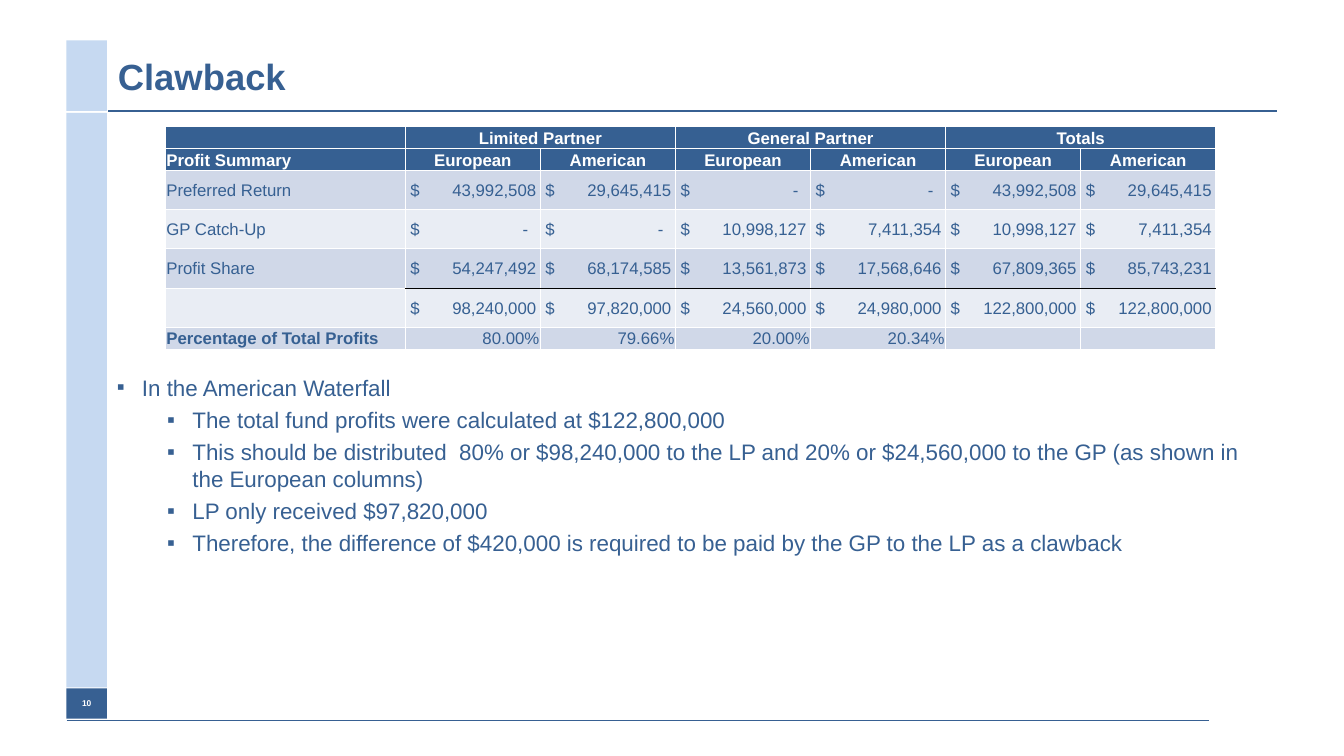
"""Builds the clawback slide: profit table above bullet points."""
import lxml.etree
import pptx
import pptx.dml.color
import pptx.enum.shapes
import pptx.enum.text
import pptx.oxml.ns
import pptx.util

RGB = pptx.dml.color.RGBColor
NAVY = RGB(0x37, 0x60, 0x92)
HEAD = RGB(0x36, 0x60, 0x92)
PALE = RGB(0xC6, 0xD9, 0xF1)
BAND = RGB(0xD0, 0xD8, 0xE8)
LIGHT = RGB(0xE9, 0xED, 0xF4)
WHITE = RGB(0xFF, 0xFF, 0xFF)
BLACK = RGB(0, 0, 0)
FONT = "Arial"
WIDE, HIGH = 13.33, 7.5

TITLE = "Clawback"
PAGE = "10"
POINTS = [
    (0, "In the American Waterfall"),
    (1, "The total fund profits were calculated at $122,800,000"),
    (1, "This should be distributed  80% or $98,240,000 to the LP and 20% or $24,560,000 "
        "to the GP (as shown in the European columns)"),
    (1, "LP only received $97,820,000"),
    (1, "Therefore, the difference of $420,000 is required to be paid by the GP to the LP "
        "as a clawback"),
]
ROWS = [
    ["", "Limited Partner", "", "General Partner", "", "Totals", ""],
    ["Profit Summary"] + ["European", "American"] * 3,
    ["Preferred Return", "43,992,508", "29,645,415", "-", "-", "43,992,508", "29,645,415"],
    ["GP Catch-Up", "-", "-", "10,998,127", "7,411,354", "10,998,127", "7,411,354"],
    ["Profit Share", "54,247,492", "68,174,585", "13,561,873", "17,568,646",
     "67,809,365", "85,743,231"],
    ["", "98,240,000", "97,820,000", "24,560,000", "24,980,000", "122,800,000", "122,800,000"],
    ["Percentage of Total Profits", "80.00%", "79.66%", "20.00%", "20.34%", "", ""],
]
COLS = [2.38] + [1.34] * 6
TALLS = [0.22] * 2 + [0.39] * 4 + [0.22]
SUM = 5
LAST = len(ROWS) - 1
BARS = [(0.4, 0.7, PALE, ""), (1.12, 5.7, PALE, ""), (6.83, 0.3, NAVY, PAGE)]
RULES = [(0.66, 11.99, 7.15, 0.75), (1.07, 12.67, 1.1, 1)]

inch = pptx.util.Inches
point = pptx.util.Pt
ALIGN = pptx.enum.text.PP_ALIGN
ANCHOR = pptx.enum.text.MSO_ANCHOR


def sub(node, tag, **keys):
    return lxml.etree.SubElement(node, pptx.oxml.ns.qn("a:" + tag), **keys)


def paint(node, tone):
    sub(node, "srgbClr", val=str(tone))


def put(par, text, size, tone, bold=False):
    run = par.add_run()
    run.text = text
    for key, val in {"name": FONT, "size": point(size), "bold": bold}.items():
        setattr(run.font, key, val)
    run.font.color.rgb = tone


def edge(props, side, tone, width):
    line = sub(props, side, w=str(point(width)))
    paint(sub(line, "solidFill"), tone)


def style(cell, row, col):
    props = cell._tc.get_or_add_tcPr()
    money = col > 0 and 2 <= row <= SUM
    for side in ("lnL", "lnR", "lnT", "lnB"):
        dark = col > 0 and (row, side) in ((SUM - 1, "lnB"), (SUM, "lnT"))
        edge(props, side, *((BLACK, 0.5) if dark else (WHITE, 1)))
    form = {
        "margin_left": inch(0.05 if money else 0.01), "margin_right": inch(0.01),
        "margin_top": inch(0.01), "margin_bottom": 0,
        "vertical_anchor": ANCHOR.BOTTOM if row < 2 else ANCHOR.MIDDLE,
    }
    for key, val in form.items():
        setattr(cell, key, val)
    cell.fill.solid()
    cell.fill.fore_color.rgb = HEAD if row < 2 else (LIGHT if row % 2 else BAND)


def write(cell, row, col, text):
    par = cell.text_frame.paragraphs[0]
    if col and row < 2:
        par.alignment = ALIGN.CENTER
    elif col and row == LAST:
        par.alignment = ALIGN.RIGHT
    elif col and text:
        stop = inch(1.17 if text == "-" else 1.25)
        tabs = sub(par._p.get_or_add_pPr(), "tabLst")
        sub(tabs, "tab", pos=str(stop), algn="r")
        text = "$\t" + text
    if text:
        bold = row < 2 or (row == LAST and col == 0)
        put(par, text, 12, WHITE if row < 2 else HEAD, bold)
    sub(par._p, "endParaRPr", sz="1200")


def grid(slide):
    frame = slide.shapes.add_table(len(ROWS), len(COLS), inch(1.64), inch(1.25),
                                   inch(sum(COLS)), inch(sum(TALLS)))
    table = frame.table
    for part, size in zip(table.columns, COLS):
        part.width = inch(size)
    for part, size in zip(table.rows, TALLS):
        part.height = inch(size)
    for row, texts in enumerate(ROWS):
        for col, text in enumerate(texts):
            style(table.cell(row, col), row, col)
            write(table.cell(row, col), row, col, text)
    for col in (1, 3, 5):
        table.cell(0, col).merge(table.cell(0, col + 1))


def frame(slide, left, top, width, height, anchor):
    text = slide.shapes.add_textbox(inch(left), inch(top), inch(width), inch(height)).text_frame
    for key, val in {"word_wrap": True, "vertical_anchor": anchor}.items():
        setattr(text, key, val)
    return text


def bullets(slide):
    text = frame(slide, 1.06, 3.66, 11.58, 3.25, ANCHOR.TOP)
    for num, (level, words) in enumerate(POINTS):
        par = text.add_paragraph() if num else text.paragraphs[0]
        props = par._p.get_or_add_pPr()
        props.set("marL", str(inch(0.25 + 0.5 * level)))
        props.set("indent", str(inch(-0.25)))
        paint(sub(props, "buClr"), NAVY)
        sub(props, "buFont", typeface=FONT)
        sub(props, "buChar", char="▪")
        par.level = level
        if num:
            par.space_before = point(3.7)
        put(par, words, 16, NAVY)


def rails(slide):
    for left, right, top, width in RULES:
        line = slide.shapes.add_connector(pptx.enum.shapes.MSO_CONNECTOR.STRAIGHT,
                                          inch(left), inch(top), inch(right), inch(top))
        line.line.color.rgb = NAVY
        line.line.width = point(width)
        sub(line._element.spPr, "effectLst")
    for top, height, tone, text in BARS:
        bar = slide.shapes.add_shape(pptx.enum.shapes.MSO_SHAPE.RECTANGLE,
                                     inch(0.66), inch(top), inch(0.4), inch(height))
        bar.shadow.inherit = False
        bar.fill.solid()
        bar.fill.fore_color.rgb = tone
        bar.line.fill.background()
        if text:
            bar.text_frame.vertical_anchor = ANCHOR.MIDDLE
            par = bar.text_frame.paragraphs[0]
            par.alignment = ALIGN.CENTER
            put(par, text, 6, WHITE, True)


def main():
    deck = pptx.Presentation()
    deck.slide_width, deck.slide_height = inch(WIDE), inch(HIGH)
    slide = deck.slides.add_slide(deck.slide_layouts[6])
    rails(slide)
    bullets(slide)
    title = frame(slide, 1.07, 0.4, 11.58, 0.7, ANCHOR.MIDDLE)
    put(title.paragraphs[0], TITLE, 26, NAVY, True)
    grid(slide)
    deck.save("out.pptx")


if __name__ == "__main__":
    main()
